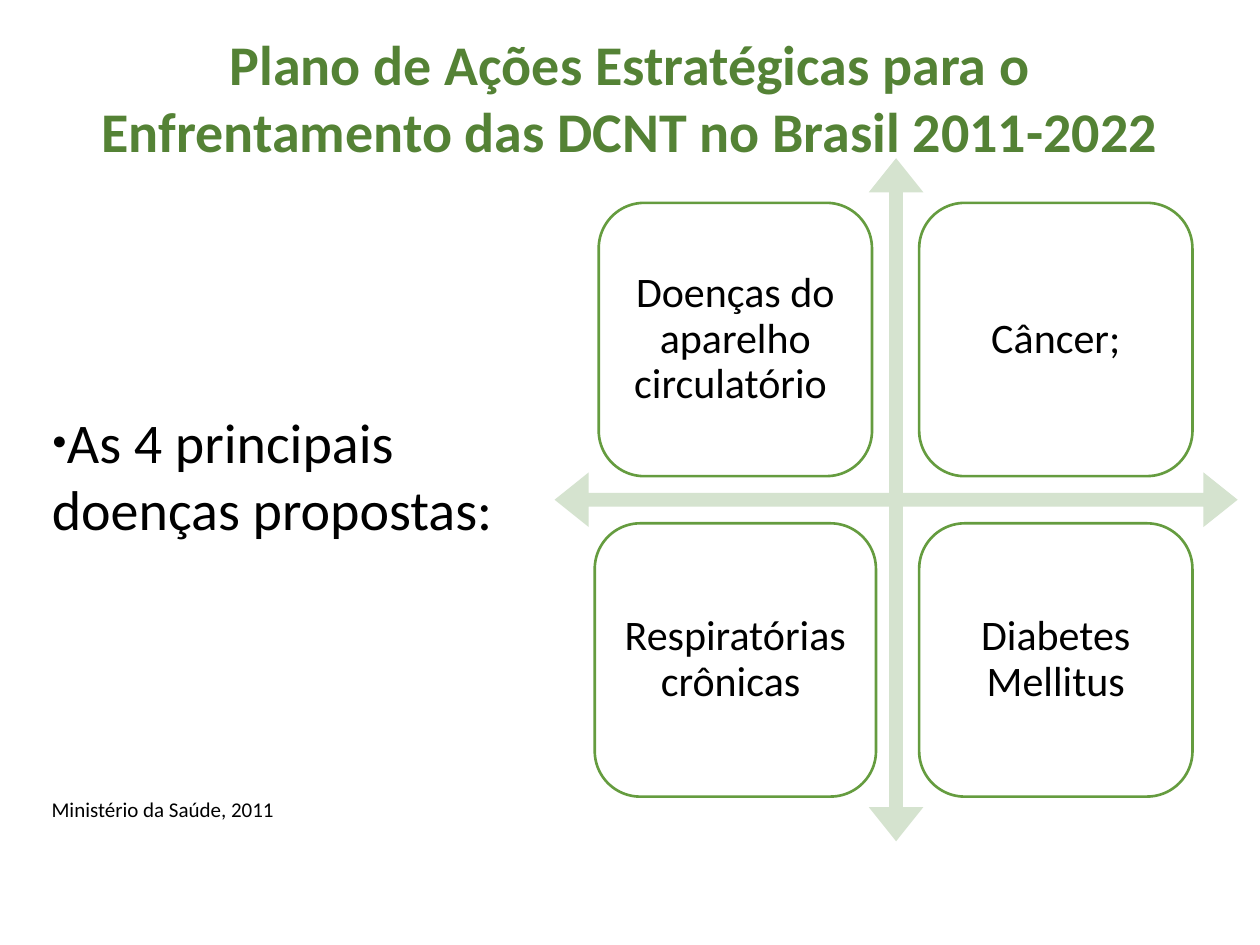
from lxml import etree
from pptx import Presentation
from pptx.dml.color import RGBColor
from pptx.enum.shapes import MSO_SHAPE
from pptx.enum.text import MSO_ANCHOR, MSO_AUTO_SIZE, PP_ALIGN
from pptx.oxml.ns import qn
from pptx.util import Cm, Pt

QUAD_ARROW = MSO_SHAPE.QUAD_ARROW
ROUNDED = MSO_SHAPE.ROUNDED_RECTANGLE
MIDDLE, TOP = MSO_ANCHOR.MIDDLE, MSO_ANCHOR.TOP
CENTER, LEFT = PP_ALIGN.CENTER, PP_ALIGN.LEFT
NO_AUTOFIT = MSO_AUTO_SIZE.NONE

COLORS = {
    "title": "548235",
    "text": "000000",
    "arrow": "D5E3CF",
    "card": "FFFFFF",
    "border": "659C3F",
}


def write_text(shape, text, size, color="text", align=LEFT, anchor=TOP, bold=False):
    frame = shape.text_frame
    frame.text = text
    frame.word_wrap = True
    frame.auto_size = NO_AUTOFIT
    frame.vertical_anchor = anchor
    paragraph = frame.paragraphs[0]
    paragraph.alignment = align
    paragraph.space_before = Pt(0)
    paragraph.font.name = "Calibri"
    paragraph.font.size = Pt(size)
    paragraph.font.bold = bold
    paragraph.font.color.rgb = RGBColor.from_string(COLORS[color])
    return paragraph


def add_filled_shape(kind, left, top, width, height, fill):
    shape = slide.shapes.add_shape(kind, Cm(left), Cm(top), Cm(width), Cm(height))
    shape.shadow.inherit = False
    shape.fill.solid()
    shape.fill.fore_color.rgb = RGBColor.from_string(COLORS[fill])
    return shape


presentation = Presentation()
presentation.slide_width = Cm(25.4)
presentation.slide_height = Cm(19.05)
slide = presentation.slides.add_slide(presentation.slide_layouts[1])

title = slide.shapes.title
title.left, title.top, title.width, title.height = Cm(1.27), Cm(0.46), Cm(22.86), Cm(3.18)
write_text(title, "Plano de Ações Estratégicas para o Enfrentamento das DCNT no Brasil 2011-2022",
           32, "title", CENTER, TOP, True)

body = slide.placeholders[1]
body.left, body.top, body.width, body.height = Cm(0.79), Cm(8.08), Cm(9.93), Cm(1.55)
paragraph = write_text(body, "As 4 principais doenças propostas:", 32)
paragraph.space_after = Pt(14.2)
properties = paragraph.font._element.getparent()
properties.set("marL", "0")
properties.set("indent", "0")
bullet_size = etree.Element(qn("a:buSzPct"), val="45000")
bullet = etree.Element(qn("a:buChar"), char="●")
for element in (bullet_size, bullet):
    paragraph.font._element.addprevious(element)

arrow = add_filled_shape(QUAD_ARROW, 11.18, 3.19, 13.77, 13.77, "arrow")
arrow.line.fill.background()
for index, share in enumerate((0.02, 0.04, 0.05)):
    arrow.adjustments[index] = share

CARD, PITCH, FIRST_LEFT, FIRST_TOP = 5.51, 6.46, 12.07, 4.09
diseases = [
    ("Doenças do aparelho circulatório ", 0),
    ("Câncer;", 0),
    ("Respiratórias crônicas ", 0.16),
    ("Diabetes Mellitus", 0),
]
for index, (disease, extra) in enumerate(diseases):
    row, column = divmod(index, 2)
    card = add_filled_shape(ROUNDED, FIRST_LEFT + column * PITCH - extra / 2,
                            FIRST_TOP + row * PITCH, CARD + extra, CARD, "card")
    card.line.color.rgb = RGBColor.from_string(COLORS["border"])
    card.line.width = Pt(1.5)
    paragraph = write_text(card, disease, 24, align=CENTER, anchor=MIDDLE)
    paragraph.line_spacing = 0.9
    paragraph.space_after = Pt(10)
    frame = card.text_frame
    frame.margin_left = frame.margin_right = Cm(0.2)
    frame.margin_top = frame.margin_bottom = Cm(0.53)

source = slide.shapes.add_textbox(Cm(0.79), Cm(15.93), Cm(9.02), Cm(0.76))
write_text(source, "Ministério da Saúde, 2011", 12)

presentation.save("out.pptx")
